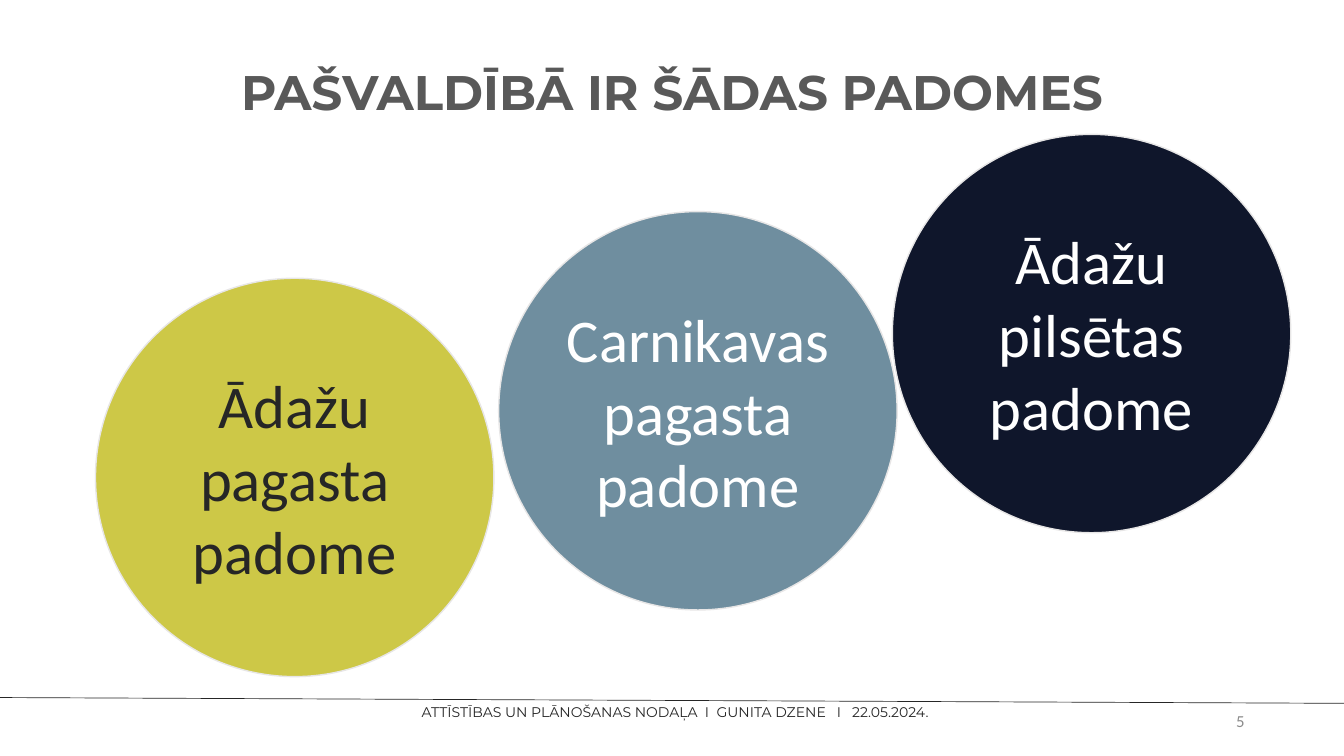
from lxml import etree
from pptx import Presentation
from pptx import util as u
from pptx.dml.color import RGBColor
from pptx.enum import shapes, text
from pptx.oxml.ns import qn

INK = "262626"
WHITE = "FFFFFF"
DIAMETER = 15.06


def colour(value):
    return RGBColor.from_string(value)


def set_all(target, values):
    for name, value in values.items():
        setattr(target, name, value)


class CouncilSlide:
    heading = "Montserrat"
    body = "Calibri"
    rim = "E7E6E6"

    def __init__(self, deck):
        self.slide = deck.slides.add_slide(deck.slide_layouts[6])

    def fill_frame(self, frame, words, font, size, ink, align="CENTER", anchor="TOP",
                   inset=None, bold=False, spacing=None):
        set_all(frame, {"word_wrap": True, "vertical_anchor": text.MSO_ANCHOR[anchor]})
        if inset is not None:
            sides = ("left", "top", "right", "bottom")
            set_all(frame, {f"margin_{side}": u.Cm(inset) for side in sides})
        paragraph = frame.paragraphs[0]
        set_all(paragraph, {"alignment": text.PP_ALIGN[align], "line_spacing": spacing})
        run = paragraph.add_run()
        run.text = words
        set_all(run.font, {"name": font, "size": u.Pt(size), "bold": bold})
        run.font.color.rgb = colour(ink)

    def label(self, box, words, font, size, ink, **layout):
        frame = self.slide.shapes.add_textbox(*map(u.Cm, box)).text_frame
        self.fill_frame(frame, words, font, size, ink, **layout)

    def circle(self, left, top, words, fill, ink):
        box = map(u.Cm, (left, top, DIAMETER, DIAMETER))
        council = self.slide.shapes.add_shape(shapes.MSO_SHAPE.OVAL, *box)
        council.shadow.inherit = False
        council.fill.solid()
        council.fill.fore_color.rgb = colour(fill)
        council.line.color.rgb = colour(self.rim)
        council.line.width = u.Pt(1.5)
        self.fill_frame(council.text_frame, words, self.body, 65, ink,
                        anchor="MIDDLE", inset=0)

    def rule(self, *ends):
        divider = self.slide.shapes.add_connector(
            shapes.MSO_CONNECTOR.STRAIGHT, *map(u.Cm, ends))
        divider.line.color.rgb = colour(INK)
        divider.line.width = u.Pt(0.75)
        etree.SubElement(divider._element.spPr, qn("a:effectLst"))


def main():
    deck = Presentation()
    set_all(deck, {"slide_width": u.Cm(50.8), "slide_height": u.Cm(28.58)})
    page = CouncilSlide(deck)
    page.label((2.01, 2.21, 46.79, 2.49), "PAŠVALDĪBĀ IR ŠĀDAS PADOMES",
               page.heading, 52, "595959", bold=True)
    councils = (
        (33.73, 5.08, "Ādažu pilsētas padome", "0F162B", WHITE),
        (18.85, 8, "Carnikavas pagasta padome", "6F8E9F", WHITE),
        (3.61, 10.52, "Ādažu pagasta padome", "CDC847", INK),
    )
    for council in councils:
        page.circle(*council)
    page.rule(0, 26.37, 51.08, 26.59)
    page.label((0.38, 26.59, 50.29, 0.64),
               "ATTĪSTĪBAS UN PLĀNOŠANAS NODAĻA  I  GUNITA DZENE   I   22.05.2024.",
               page.heading, 15, INK, inset=0, spacing=u.Pt(18))
    page.label((35.86, 26.49, 11.43, 1.52), "5", page.body, 18, "8C8C8C",
               align="RIGHT", anchor="MIDDLE")
    deck.save("out.pptx")


if __name__ == "__main__":
    main()
